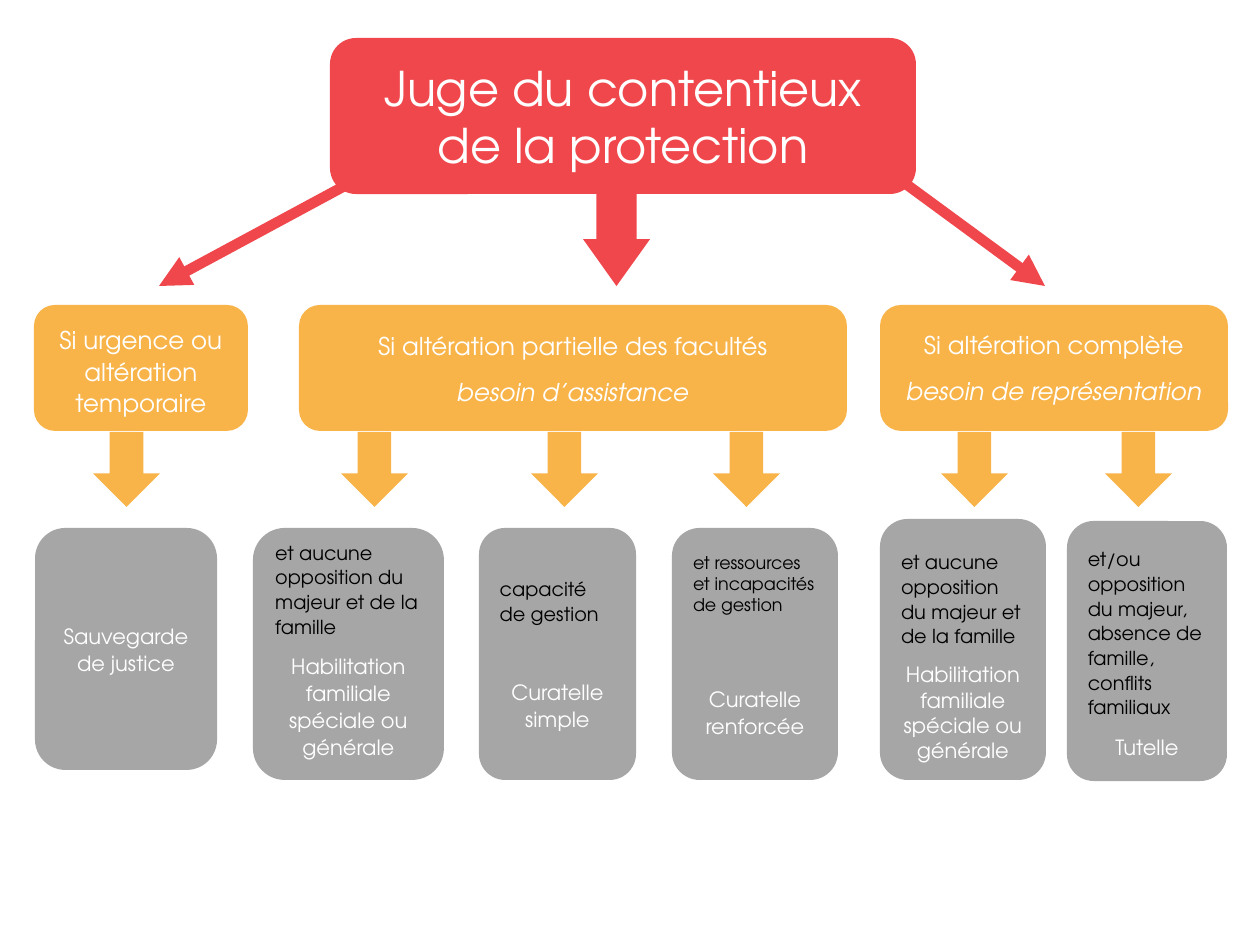
import dataclasses

import lxml.etree
import pptx
import pptx.dml.color
import pptx.enum.shapes
import pptx.enum.text
import pptx.oxml.ns
import pptx.util

SHAPE = pptx.enum.shapes.MSO_SHAPE
ALIGN = pptx.enum.text.PP_ALIGN
ANCHOR = pptx.enum.text.MSO_ANCHOR


@dataclasses.dataclass(frozen=True)
class Theme:
    font: str = "TeX Gyre Adventor"
    red: str = "F0474C"
    orange: str = "F8B449"
    grey: str = "A6A6A6"
    white: str = "FFFFFF"
    black: str = "000000"
    title: float = 27.3
    condition: int = 14
    measure: int = 12
    reason: int = 11
    small_reason: int = 10


@dataclasses.dataclass
class Line:
    text: str
    size: float
    color: str
    align: ALIGN = ALIGN.CENTER
    spacing: float = 1.07
    after: int = 8
    italic: bool = False


class DecisionTree:
    """Draws the boxes and arrows of a decision tree on one slide."""

    def __init__(self, slide, theme):
        self.slide = slide
        self.theme = theme

    def px(self, length):
        return pptx.util.Emu(round(length * 914400 / 126))

    def color(self, value):
        return pptx.dml.color.RGBColor.from_string(value)

    def shape(self, kind, bounds, fill):
        shape = self.slide.shapes.add_shape(kind, *map(self.px, bounds))
        shape.shadow.inherit = False
        shape.fill.solid()
        shape.fill.fore_color.rgb = self.color(fill)
        shape.line.fill.background()
        return shape

    def box(self, bounds, fill, lines, top=None):
        frame = self.shape(SHAPE.ROUNDED_RECTANGLE, bounds, fill).text_frame
        frame.word_wrap = True
        frame.margin_left = frame.margin_right = self.px(13)
        frame.vertical_anchor = ANCHOR.MIDDLE if top is None else ANCHOR.TOP
        if top is not None:
            frame.margin_top = self.px(top)
        for index, line in enumerate(lines):
            paragraph = frame.add_paragraph() if index else frame.paragraphs[0]
            paragraph.text = line.text
            paragraph.alignment = line.align
            paragraph.line_spacing = line.spacing
            is_last = index == len(lines) - 1
            paragraph.space_after = pptx.util.Pt(0 if is_last else line.after)
            font = paragraph.font
            font.name = self.theme.font
            font.size = pptx.util.Pt(line.size)
            font.italic = line.italic
            font.color.rgb = self.color(line.color)

    def down_arrow(self, bounds, fill, shaft=0.5, head=0.5):
        arrow = self.shape(SHAPE.DOWN_ARROW, bounds, fill)
        arrow.adjustments[0] = shaft
        arrow.adjustments[1] = head

    def branch(self, start, end):
        connector = self.slide.shapes.add_connector(
            pptx.enum.shapes.MSO_CONNECTOR.STRAIGHT, *map(self.px, start + end))
        connector.line.color.rgb = self.color(self.theme.red)
        connector.line.width = pptx.util.Pt(6)
        qn = pptx.oxml.ns.qn
        outline = connector.line._get_or_add_ln()
        lxml.etree.SubElement(outline, qn("a:tailEnd"), type="triangle")
        lxml.etree.SubElement(connector._element.spPr, qn("a:effectLst"))


def main():
    deck = pptx.Presentation()
    deck.slide_width = pptx.util.Inches(10)
    deck.slide_height = pptx.util.Inches(7.5)
    theme = Theme()
    tree = DecisionTree(deck.slides.add_slide(deck.slide_layouts[6]), theme)

    def condition(text, italic=False):
        return Line(text, theme.condition, theme.white, italic=italic)

    def reason(text, size=theme.reason, spacing=1.07, after=8):
        return Line(text, size, theme.black, ALIGN.LEFT, spacing, after)

    def measure(text, spacing=1.07):
        return Line(text, theme.measure, theme.white, spacing=spacing)

    conditions = [
        (34, 214, 12, [condition("Si urgence ou altération temporaire")]),
        (299, 548, 18, [condition("Si altération partielle des facultés"),
                        condition("besoin d’assistance", italic=True)]),
        (880, 348, 17, [condition("Si altération complète"),
                        condition("besoin de représentation", italic=True)]),
    ]
    for left, width, top, lines in conditions:
        tree.box((left, 305, width, 126), theme.orange, lines, top)

    no_opposition = "et aucune opposition du majeur et de la famille"
    habilitation = "Habilitation familiale spéciale ou générale"
    measures = [
        ((35, 528, 182, 242), None, [measure("Sauvegarde de justice")]),
        ((253, 528, 191, 252), 2,
         [reason(no_opposition), measure(habilitation)]),
        ((479, 528, 157, 252), 40,
         [reason("capacité de gestion", after=30), measure("Curatelle simple")]),
        ((672, 528, 166, 252), 16,
         [reason("et ressources et incapacités de gestion",
                 theme.small_reason, spacing=1.0, after=40),
          measure("Curatelle renforcée")]),
        ((880, 519, 166, 261), 22,
         [reason(no_opposition), measure(habilitation, spacing=1.0)]),
        ((1067, 521, 160, 260), 17,
         [reason("et/ou opposition du majeur, absence de famille, "
                 "conflits familiaux"), measure("Tutelle")]),
    ]
    for bounds, top, lines in measures:
        tree.box(bounds, theme.grey, lines, top)

    for left in (93, 341, 531, 713, 941, 1105):
        tree.down_arrow((left, 432, 67, 75), theme.orange)

    tree.branch((365, 175), (159, 286))
    tree.branch((895, 176), (1045, 286))
    tree.down_arrow((583, 193, 67, 93), theme.red, shaft=0.6, head=0.7)
    tree.box((330, 38, 586, 156), theme.red,
             [Line(text, theme.title, theme.white, spacing=1.0, after=0)
              for text in ("Juge du contentieux", "de la protection")])

    deck.save("out.pptx")


if __name__ == "__main__":
    main()
